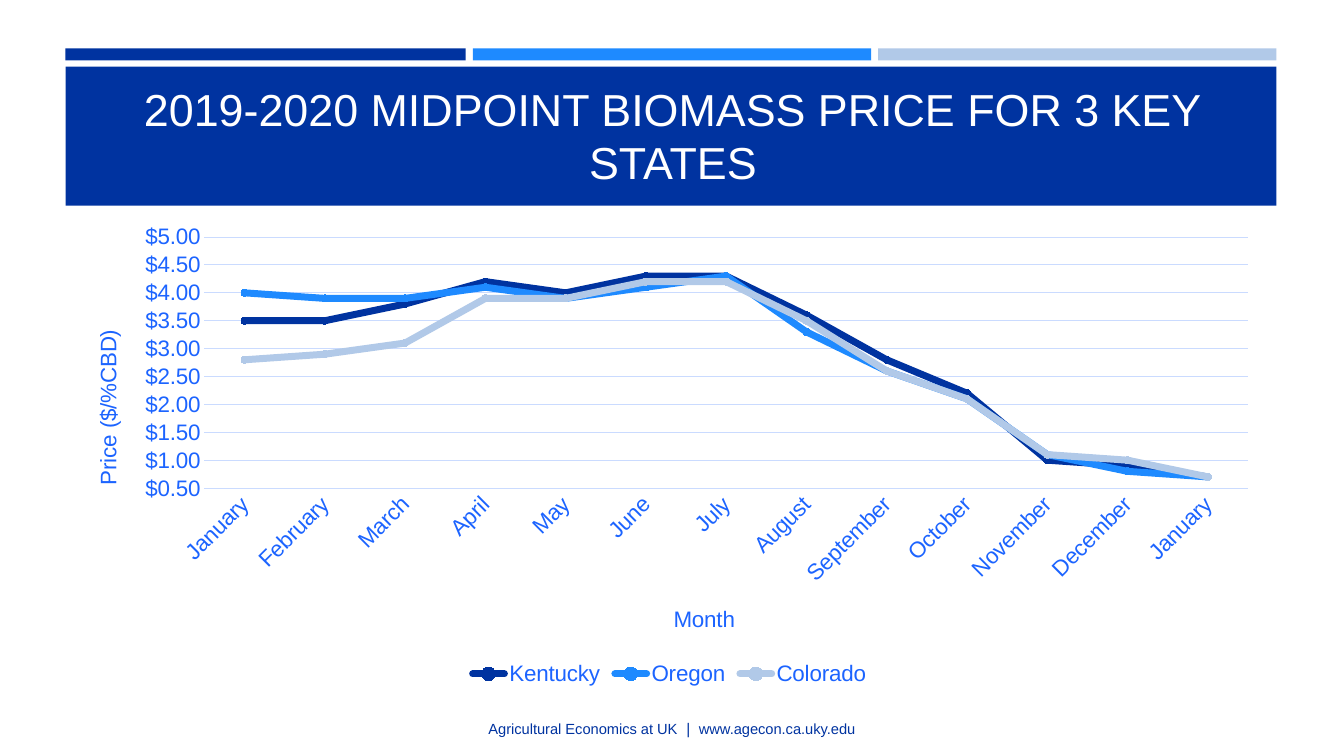
from lxml import etree
from pptx import Presentation
from pptx.chart.data import CategoryChartData
from pptx.dml.color import RGBColor
from pptx.enum.chart import XL_CHART_TYPE as ChartType, XL_LEGEND_POSITION as LegendPosition
from pptx.enum.chart import XL_MARKER_STYLE as MarkerStyle, XL_TICK_MARK as TickMark
from pptx.enum.shapes import MSO_SHAPE as Shape
from pptx.enum.text import MSO_ANCHOR as Anchor, PP_ALIGN as Align
from pptx.oxml.ns import qn
from pptx.util import Inches, Pt

NAVY = RGBColor(0x00, 0x33, 0xA0)
BLUE = RGBColor(0x1E, 0x8A, 0xFF)
PALE = RGBColor(0xB1, 0xC9, 0xE8)
LABEL = RGBColor(0x1C, 0x64, 0xFF)
GRID = RGBColor(0xCA, 0xDB, 0xFF)
WHITE = RGBColor(0xFF, 0xFF, 0xFF)
FONT = "Arial"

deck = Presentation()
deck.slide_width, deck.slide_height = Inches(13.33), Inches(7.5)
page = deck.slides.add_slide(deck.slide_layouts[6])


def add_text(spans, left, top, width, height, color, anchor=Anchor.TOP):
    """Add a centred paragraph made of (text, size) spans."""
    box = page.shapes.add_textbox(Inches(left), Inches(top), Inches(width), Inches(height))
    frame = box.text_frame
    frame.word_wrap = True
    frame.vertical_anchor = anchor
    para = frame.paragraphs[0]
    para.alignment = Align.CENTER
    for text, size in spans:
        span = para.add_run()
        span.text = text
        span.font.name, span.font.size = FONT, Pt(size)
        span.font.color.rgb = color


def place(parent, index, **fractions):
    """Give a chart part a fixed place, in fractions of the chart."""
    for old in parent.findall(qn("c:layout")):
        parent.remove(old)
    layout = etree.Element(qn("c:layout"))
    manual = etree.SubElement(layout, qn("c:manualLayout"))
    if "w" in fractions:
        etree.SubElement(manual, qn("c:layoutTarget")).set("val", "inner")
    for name in ("xMode", "yMode"):
        etree.SubElement(manual, qn("c:" + name)).set("val", "edge")
    for name, value in fractions.items():
        etree.SubElement(manual, qn("c:" + name)).set("val", str(value))
    parent.insert(index, layout)


# Colour strips and title band
for left, top, width, height, color in [
    (0.65, 0.48, 3.97, 0.12, NAVY),
    (4.69, 0.48, 3.95, 0.12, BLUE),
    (8.71, 0.48, 3.95, 0.12, PALE),
    (0.65, 0.66, 12.01, 1.38, NAVY),
]:
    band = page.shapes.add_shape(
        Shape.RECTANGLE, Inches(left), Inches(top), Inches(width), Inches(height))
    band.shadow.inherit = False
    band.fill.solid()
    band.fill.fore_color.rgb = color
    band.line.fill.background()

# Title and footer
add_text([("2019-2020 MIDPOINT BIOMASS PRICE FOR 3 KEY STATES", 32)],
         0.85, 0.75, 11.65, 1.18, WHITE, anchor=Anchor.MIDDLE)
add_text([("Agricultural Economics at UK", 10.5), ("  |  ", 11), ("www.agecon.ca.uky.edu", 10.5)],
         0, 7.08, 13.33, 0.29, NAVY)

# Price data
prices = CategoryChartData(number_format='"$"#,##0.00')
prices.categories = ["January", "February", "March", "April", "May", "June", "July",
                     "August", "September", "October", "November", "December", "January"]
prices.add_series("Kentucky", [3.5, 3.5, 3.8, 4.2, 4, 4.3, 4.3, 3.6, 2.8, 2.2, 1, 0.9, 0.7])
prices.add_series("Oregon", [4, 3.9, 3.9, 4.1, 3.9, 4.1, 4.3, 3.3, 2.6, 2.1, 1.1, 0.8, 0.7])
prices.add_series("Colorado", [2.8, 2.9, 3.1, 3.9, 3.9, 4.2, 4.2, 3.5, 2.6, 2.1, 1.1, 1, 0.7])

# Line chart
chart = page.shapes.add_chart(ChartType.LINE_MARKERS, Inches(0.65), Inches(2.15),
                              Inches(11.98), Inches(4.7), prices).chart
chart.has_title = False
chart.font.name, chart.font.size = FONT, Pt(16)
chart.font.color.rgb = LABEL
chart.has_legend = True
chart.legend.position = LegendPosition.BOTTOM
chart.legend.include_in_layout = False
plot = chart.plots[0]
plot.vary_by_categories = False
for series, color in zip(plot.series, (NAVY, BLUE, PALE)):
    series.smooth = False
    series.format.line.width = Pt(5)
    series.format.line.color.rgb = color
    series.format.line._ln.set("cap", "rnd")
    series.marker.style, series.marker.size = MarkerStyle.CIRCLE, 5
    series.marker.format.fill.solid()
    series.marker.format.fill.fore_color.rgb = color
    series.marker.format.line.color.rgb = color

# Axes and their titles
months, dollars = chart.category_axis, chart.value_axis
for axis, title, x, y in [(months, "Month", 0.5, 0.81), (dollars, "Price ($/%CBD)", 0.02, 0.23)]:
    axis.major_tick_mark = axis.minor_tick_mark = TickMark.NONE
    axis.tick_labels.font.size = Pt(16)
    axis.tick_labels.font.color.rgb = LABEL
    para = axis.axis_title.text_frame.paragraphs[0]
    span = para.add_run()
    span.text = title
    span.font.name, span.font.size, span.font.bold = FONT, Pt(16), False
    span.font.color.rgb = LABEL
    place(axis.axis_title._element, 1, x=x, y=y)
dollars.axis_title.text_frame._txBody.bodyPr.set("rot", "-5400000")
months._element.find(qn("c:txPr")).find(qn("a:bodyPr")).set("rot", "-2700000")
dollars.minimum_scale, dollars.maximum_scale, dollars.major_unit = 0.5, 5, 0.5
dollars.tick_labels.number_format = '"$"#,##0.00'
dollars.tick_labels.number_format_is_linked = False
dollars.format.line.fill.background()
for line in (months.format.line, dollars.major_gridlines.format.line):
    line.color.rgb, line.width = GRID, Pt(0.75)
place(chart._chartSpace.chart.plotArea, 0, x=0.115, y=0.043, w=0.864, h=0.53)

deck.save("out.pptx")
